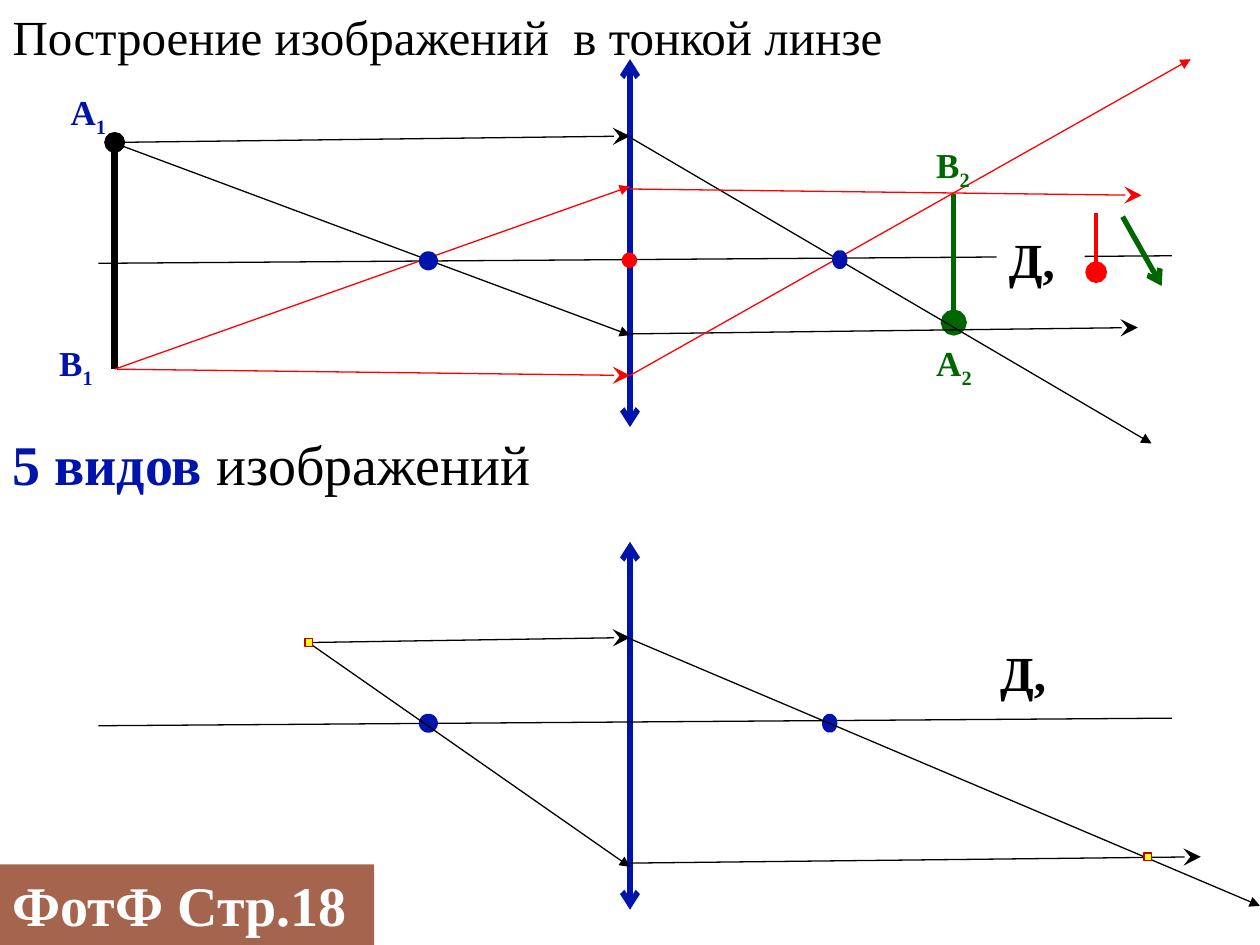
from pptx import Presentation
from pptx.dml.color import RGBColor
from pptx.enum.shapes import MSO_CONNECTOR as Connector, MSO_SHAPE as Shape
from pptx.enum.text import MSO_ANCHOR as Anchor, MSO_AUTO_SIZE as AutoSize, PP_ALIGN as Align
from pptx.oxml.ns import qn
from pptx.util import Inches, Pt
from lxml.etree import SubElement

COLORS = {
    "black": "000000", "white": "FFFFFF", "red": "FF0000", "blue": "0014AC",
    "green": "006600", "brown": "A5644E", "yellow": "FFFF00", "dark red": "C00000",
}
FONT = "Times New Roman"
LENS_X = 5
LENS_HEIGHT = 2.92


def rgb(name):
    return RGBColor.from_string(COLORS[name])


def add_line(slide, box, start, end, color="black", width=0.75, head=None, tail=None, size="med"):
    """Draw a line between two points measured from the corner of the box."""
    left, top = box
    line = slide.shapes.add_connector(
        Connector.STRAIGHT,
        Inches(left + start[0]), Inches(top + start[1]),
        Inches(left + end[0]), Inches(top + end[1]))
    line.line.color.rgb = rgb(color)
    line.line.width = Pt(width)
    outline = line.line._get_or_add_ln()
    for tag, kind in (("a:headEnd", head), ("a:tailEnd", tail)):
        if kind:
            SubElement(outline, qn(tag), type=kind, w=size, len=size)
    SubElement(line._element.spPr, qn("a:effectLst"))


def add_ray(slide, box, start, end, color="black"):
    add_line(slide, box, start, end, color, tail="triangle")


def add_parallel_ray(slide, box, start, end, color="black"):
    add_line(slide, box, start, end, color, tail="stealth", size="lg")


def add_mark(slide, box, kind, place, size, fill, line, width):
    left, top = box
    mark = slide.shapes.add_shape(
        kind, Inches(left + place[0]), Inches(top + place[1]), Inches(size[0]), Inches(size[1]))
    mark.shadow.inherit = False
    mark.fill.solid()
    mark.fill.fore_color.rgb = rgb(fill)
    mark.line.color.rgb = rgb(line)
    mark.line.width = Pt(width)


def write(shape, parts, size):
    """Fill a shape with runs given as (text, color, bold)."""
    frame = shape.text_frame
    frame.word_wrap = True
    frame.auto_size = AutoSize.SHAPE_TO_FIT_TEXT
    frame.vertical_anchor = Anchor.TOP
    paragraph = frame.paragraphs[0]
    paragraph.alignment = Align.LEFT
    for text, color, bold in parts:
        run = paragraph.add_run()
        run.text = text
        run.font.name = FONT
        run.font.size = Pt(size)
        run.font.bold = bold
        run.font.color.rgb = rgb(color)


def add_text(slide, left, top, width, height, parts, size, fill=None):
    shape = slide.shapes.add_textbox(Inches(left), Inches(top), Inches(width), Inches(height))
    if fill:
        shape.fill.solid()
        shape.fill.fore_color.rgb = rgb(fill)
    write(shape, parts, size)
    return shape


def add_point_label(slide, box, place, letter, index, color):
    label = add_text(slide, box[0] + place[0], box[1] + place[1], 0.64, 0.44,
                     [(letter, color, True), (index, color, True)], 20)
    label.text_frame.word_wrap = False
    label.text_frame.margin_left = Inches(0.24)
    label.text_frame.paragraphs[0].runs[1].font._element.set("baseline", "-25000")


def add_lens(slide, box, axis_y):
    add_line(slide, box, (LENS_X, 0), (LENS_X, LENS_HEIGHT), "blue", 3.25, "arrow", "arrow")
    add_line(slide, box, (0.78, axis_y), (9.3, axis_y - 0.06))


def add_foci(slide, box, left_focus, right_focus):
    for place, width in ((left_focus, 0.08), (right_focus, 0.05)):
        add_mark(slide, box, Shape.OVAL, place, (width, 0.08), "red", "blue", 5.25)


def add_segment_diagram(slide, box):
    """Image of the segment A1B1, with the rays of each end in its own color."""
    add_lens(slide, box, 1.62)
    add_line(slide, box, (0.91, 2.46), (0.91, 0.66), width=4, tail="oval")
    add_line(slide, box, (7.57, 1.07), (7.57, 2.09), "green", 3, tail="oval", size="lg")

    add_parallel_ray(slide, box, (0.93, 0.66), (LENS_X, 0.61))
    add_ray(slide, box, (LENS_X, 0.62), (9.14, 3.05))
    add_ray(slide, box, (0.92, 0.67), (LENS_X, 2.19))
    add_parallel_ray(slide, box, (LENS_X, 2.18), (9.03, 2.13))

    add_parallel_ray(slide, box, (0.93, 2.46), (LENS_X, 2.51), "red")
    add_ray(slide, box, (LENS_X, 2.51), (9.45, 0), "red")
    add_ray(slide, box, (0.91, 2.46), (LENS_X, 1.01), "red")
    add_parallel_ray(slide, box, (LENS_X, 1.03), (9.06, 1.08), "red")

    add_mark(slide, box, Shape.OVAL, (4.97, 1.57), (0.05, 0.05), "red", "red", 5.25)
    add_foci(slide, box, (3.36, 1.56), (6.64, 1.55))

    for place, letter, index, color in (
            ((0.32, 0.2), "А", "1", "blue"), ((0.23, 2.19), "В", "1", "blue"),
            ((7.19, 2.19), "А", "2", "green"), ((7.19, 0.62), "В", "2", "green")):
        add_point_label(slide, box, place, letter, index, color)

    add_image_kind(slide, box, (7.91, 1.3), "white")
    add_line(slide, box, (8.7, 1.22), (8.7, 1.69), "red", 2.5, tail="oval", size="lg")
    add_line(slide, box, (8.91, 1.25), (9.22, 1.8), "green", 3, tail="arrow")


def add_point_diagram(slide, box):
    """Image of a single point."""
    add_lens(slide, box, 1.46)
    add_foci(slide, box, (3.36, 1.4), (6.56, 1.4))
    add_parallel_ray(slide, box, (2.42, 0.8), (LENS_X, 0.76))
    add_ray(slide, box, (2.42, 0.78), (LENS_X, 2.58))
    add_ray(slide, box, (LENS_X, 0.77), (10, 2.89))
    add_parallel_ray(slide, box, (LENS_X, 2.55), (9.53, 2.5))
    add_image_kind(slide, box, (7.84, 0.75))
    for place in ((2.42, 0.77), (9.08, 2.47)):
        add_mark(slide, box, Shape.RECTANGLE, place, (0.06, 0.06), "yellow", "dark red", 0.75)


def add_image_kind(slide, box, place, fill=None):
    add_text(slide, box[0] + place[0], box[1] + place[1], 0.7, 0.57,
             [("Д,", "black", True)], 28, fill)


def place_title(slide):
    title = slide.shapes.title
    title.left, title.top = Inches(0), Inches(0)
    title.width, title.height = Inches(7.81), Inches(0.57)
    write(title, [("Построение изображений  в тонкой линзе", "black", False)], 28)


def main():
    presentation = Presentation()
    presentation.slide_width = Inches(10)
    presentation.slide_height = Inches(7.5)
    slide = presentation.slides.add_slide(presentation.slide_layouts[5])

    place_title(slide)
    add_segment_diagram(slide, (0, 0.47))
    add_text(slide, 0, 3.36, 4.69, 0.64,
             [("5 видов ", "blue", True), ("изображений", "black", False)], 32)
    add_point_diagram(slide, (0, 4.3))
    add_text(slide, 0, 6.86, 2.97, 0.64, [("ФотФ Стр.18", "white", True)], 32, "brown")
    presentation.save("out.pptx")


if __name__ == "__main__":
    main()
